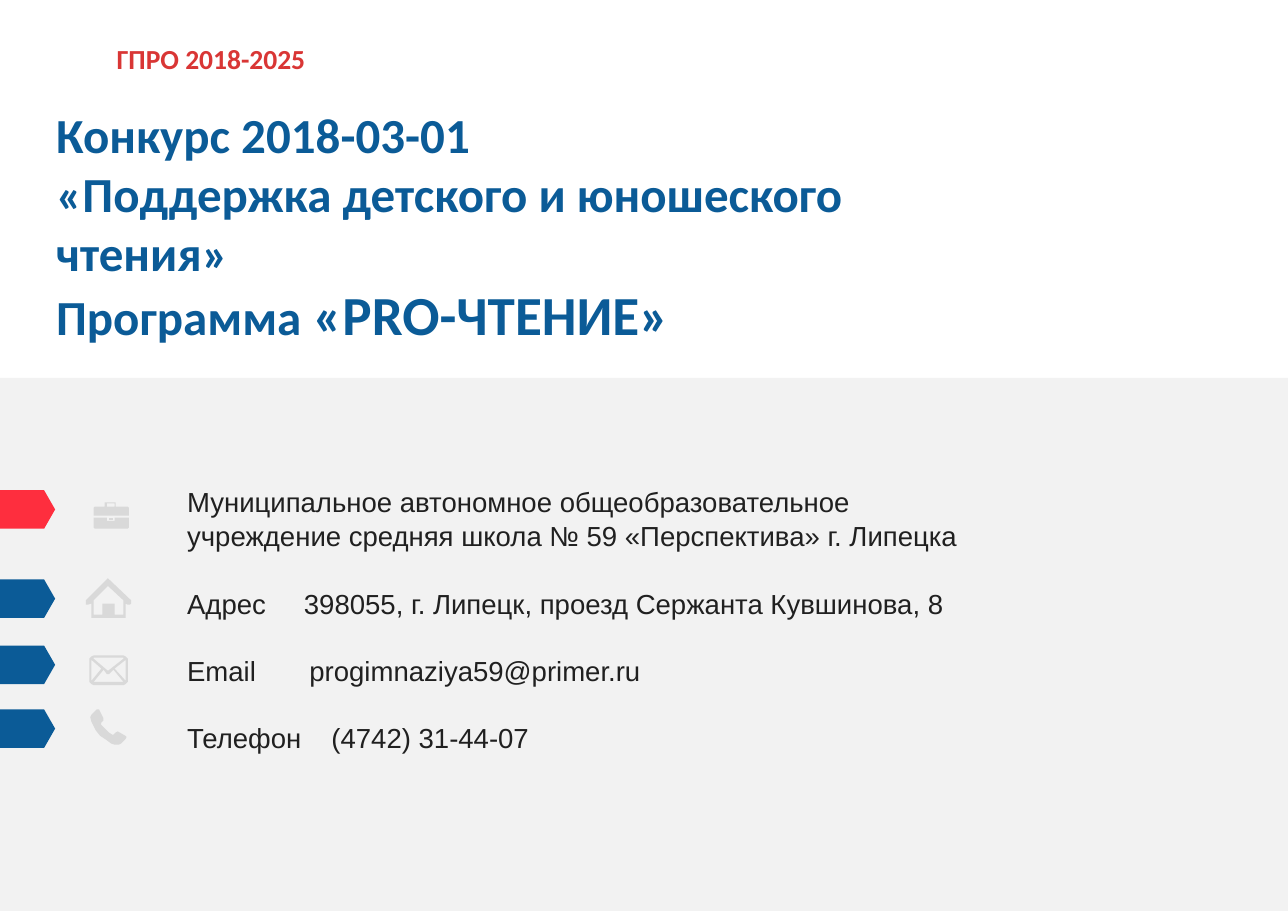
from dataclasses import dataclass

from lxml.etree import SubElement
from pptx import Presentation
from pptx.dml.color import RGBColor as Rgb
from pptx.enum.shapes import MSO_SHAPE as Preset
from pptx.enum.text import MSO_ANCHOR as Anchor, MSO_AUTO_SIZE as AutoSize
from pptx.oxml.ns import qn
from pptx.util import Inches, Pt


@dataclass(frozen=True)
class Theme:
    red: str = "FE2E3E"
    blue: str = "0B5B97"
    heading_red: str = "D93635"
    ink: str = "202020"
    band: str = "F2F2F2"
    icon: str = "D9D9D9"
    heading_font: str = "Calibri"
    body_font: str = "Arial"
    small: int = 18
    large: int = 32
    largest: int = 36
    icon_unit: float = 1 / 1169


class SlideBuilder:
    """Places themed elements by percentages of the slide's width and height."""

    def __init__(self, deck, theme):
        self.deck, self.theme = deck, theme
        self.slide = deck.slides.add_slide(deck.slide_layouts[6])

    def emu(self, box):
        sides = (self.deck.slide_width, self.deck.slide_height) * 2
        return [round(side * share / 100) for side, share in zip(sides, box)]

    def paint(self, shape, color):
        shape.shadow.inherit = False
        shape.fill.solid()
        shape.fill.fore_color.rgb = Rgb.from_string(color)
        shape.line.fill.background()

    def block(self, box, color):
        shape = self.slide.shapes.add_shape(Preset.RECTANGLE, *self.emu(box))
        self.paint(shape, color)

    def marker(self, top, color, body=3.42, tip=0.86, height=4.23):
        self.block((0, top, body, height), color)
        x, y, w, h = self.emu((body, top, tip, height))
        arrow = self.slide.shapes.add_shape(
            Preset.ISOSCELES_TRIANGLE, x + (w - h) // 2, y + (h - w) // 2, h, w)
        arrow.rotation = 90
        self.paint(arrow, color)

    def icon(self, left, top, *contours):
        scale = self.deck.slide_width * self.theme.icon_unit
        outline = self.slide.shapes.build_freeform(*contours[0][0], scale=scale)
        for number, contour in enumerate(contours):
            if number:
                outline.move_to(*contour[0])
            outline.add_line_segments(contour[1:], close=True)
        self.paint(outline.convert_to_shape(*self.emu((left, top))), self.theme.icon)

    def text_frame(self, box, **settings):
        frame = self.slide.shapes.add_textbox(*self.emu(box)).text_frame
        for name, value in settings.items():
            setattr(frame, name, value)
        return frame

    def paragraph(self, frame, runs, color, font, indent=0, tab=None, **spacing):
        first = not frame.paragraphs[0].runs
        paragraph = frame.paragraphs[0] if first else frame.add_paragraph()
        if first:
            spacing.pop("space_before", None)
        for name, value in spacing.items():
            setattr(paragraph, name, value)
        properties = paragraph._p.get_or_add_pPr()
        if indent:
            properties.set("marL", str(Inches(indent)))
            properties.set("indent", "0")
        if tab:
            stops = SubElement(properties, qn("a:tabLst"))
            SubElement(stops, qn("a:tab"), pos=str(Inches(tab)), algn="l")
        for words, size in runs:
            run = paragraph.add_run()
            run.text = words
            run.font.color.rgb = Rgb.from_string(color)
            for name, value in {**font, "size": Pt(size)}.items():
                setattr(run.font, name, value)


def main():
    deck = Presentation()
    deck.slide_width, deck.slide_height = Inches(11.69), Inches(8.27)
    theme = Theme()
    page = SlideBuilder(deck, theme)
    heading = {"name": theme.heading_font, "bold": True}
    body = {"name": theme.body_font, "bold": False}

    program_label = page.text_frame((8.21, 3.99, 16.42, 4.84), word_wrap=False)
    page.paragraph(program_label, [("ГПРО 2018-2025", theme.small)],
                   theme.heading_red, heading)

    page.block((0, 41.48, 100, 58.52), theme.band)

    title = page.text_frame(
        (1.71, 11, 74.08, 27.57), word_wrap=True, vertical_anchor=Anchor.MIDDLE,
        margin_left=Inches(0.11), margin_right=Inches(0.11))
    for runs in (
        [("Конкурс 2018-03-01", theme.large)],
        [("«Поддержка детского и юношеского чтения»", theme.large)],
        [("Программа ", theme.large), ("«PRO-ЧТЕНИЕ»", theme.largest)],
    ):
        page.paragraph(title, runs, theme.blue, heading, indent=0.2)

    contacts = page.text_frame((13.69, 52.48, 65.7, 30.47), word_wrap=True,
                               auto_size=AutoSize.SHAPE_TO_FIT_TEXT)
    school = ("Муниципальное автономное общеобразовательное учреждение "
              "средняя школа № 59 «Перспектива» г. Липецка")
    for words, tab in (
        ([school], None),
        (["Адрес", "398055, г. Липецк, проезд Сержанта Кувшинова, 8"], 1.06),
        (["Email", "progimnaziya59@primer.ru"], 1.11),
        (["Телефон", "(4742) 31-44-07"], 1.31),
    ):
        page.paragraph(contacts, [("\t".join(words), theme.small)], theme.ink, body,
                       tab=tab, line_spacing=1.04, space_before=Pt(21.6))

    for top, color in ((53.81, theme.red), (63.6, theme.blue),
                       (70.86, theme.blue), (77.87, theme.blue)):
        page.marker(top, color)

    briefcase_base = [(0, 14), (12, 14), (12, 17), (19, 17), (19, 14), (32, 14),
                      (32, 23), (31, 24), (1, 24), (0, 23)]
    briefcase_lid = [(0, 12), (0, 5), (1, 4), (10, 4), (10, 0), (20, 0), (20, 4),
                     (31, 4), (32, 5), (32, 12)]
    briefcase_handle = [(12, 4), (12, 1), (19, 1), (19, 4)]
    briefcase_clasp = [(14, 14), (18, 14), (18, 16), (14, 16)]
    house_walls = [(41, 20), (20, 0), (0, 20), (0, 24), (2, 24), (5, 23), (5, 36),
                   (36, 36), (36, 23), (38, 24), (40, 24), (41, 23)]
    house_inside = [(34, 33), (26, 33), (26, 23), (15, 23), (15, 33), (7, 33),
                    (7, 20), (20, 7), (34, 20)]
    envelope_edge = [(4, 0), (31, 0), (33, 1), (35, 3), (35, 24), (33, 26), (31, 27),
                     (4, 27), (2, 26), (0, 24), (0, 3), (2, 1)]
    envelope_right = [(23, 12), (33, 4), (33, 23)]
    envelope_flap = [(31, 2), (31, 3), (17, 14), (4, 3), (4, 2)]
    envelope_left = [(2, 23), (2, 4), (11, 12)]
    envelope_bottom = [(4, 24), (13, 13), (16, 17), (18, 17), (22, 13), (31, 24)]
    handset = [(33, 25), (32, 27), (28, 31), (26, 32), (22, 32), (19, 31), (15, 28),
               (12, 26), (9, 24), (5, 19), (3, 15), (1, 11), (0, 7), (1, 5), (6, 0),
               (8, 0), (12, 8), (12, 10), (10, 12), (10, 14), (12, 16), (17, 21),
               (20, 23), (21, 23), (23, 21), (25, 20), (32, 24)]

    page.icon(7.27, 55.14, briefcase_base)
    page.icon(7.27, 55.14, briefcase_lid, briefcase_handle)
    page.icon(7.27, 55.14, briefcase_clasp)
    page.icon(6.67, 63.48, house_walls, house_inside)
    page.icon(7.01, 77.87, handset)
    page.icon(6.93, 71.95, envelope_edge, envelope_right, envelope_flap,
              envelope_left, envelope_bottom)

    deck.save("out.pptx")


if __name__ == "__main__":
    main()
